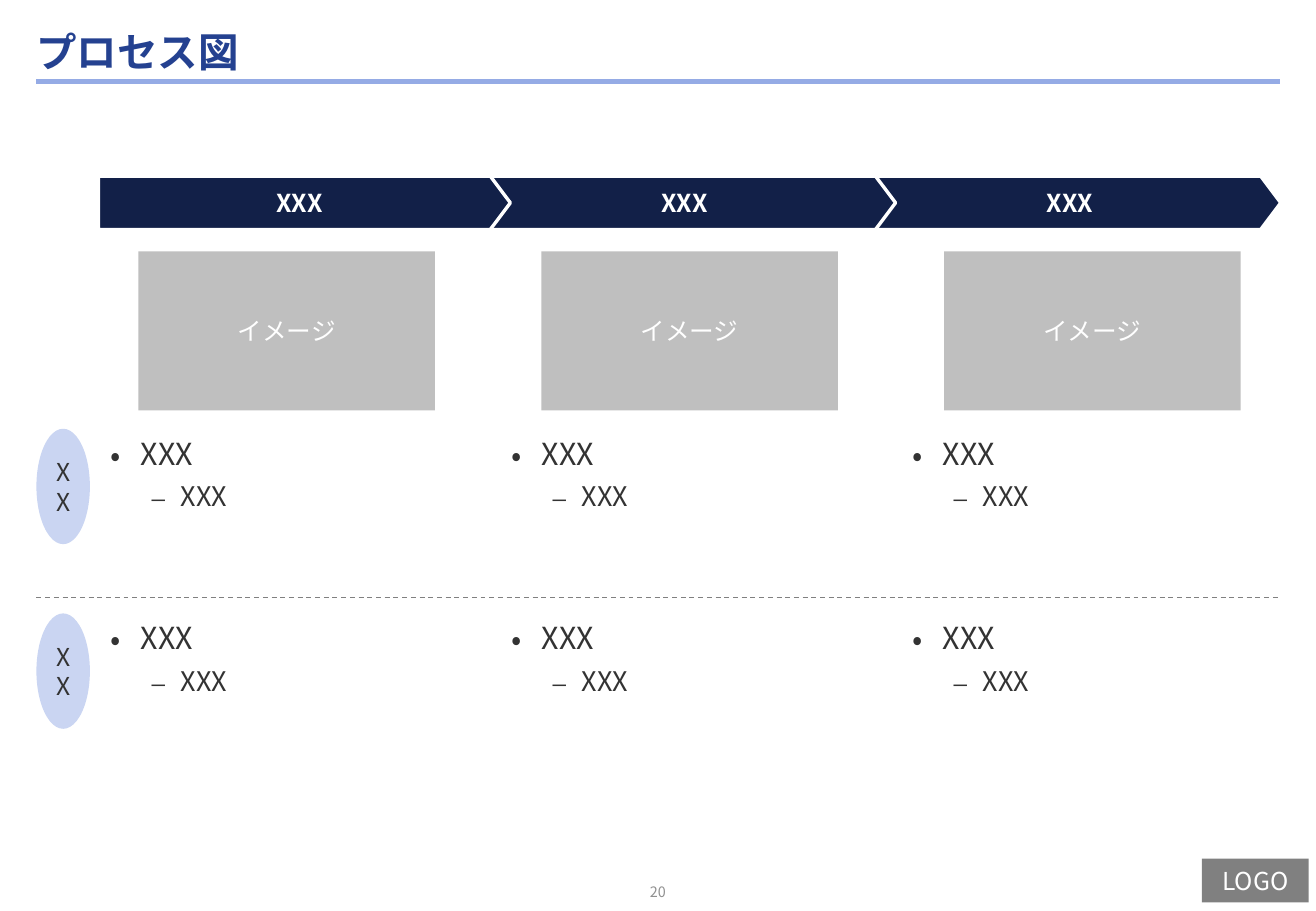
from lxml import etree
from pptx import Presentation
from pptx.dml.color import RGBColor
from pptx.enum.dml import MSO_LINE
from pptx.enum.shapes import MSO_CONNECTOR, MSO_SHAPE
from pptx.enum.text import MSO_ANCHOR, PP_ALIGN
from pptx.oxml.ns import qn
from pptx.util import Inches, Pt

RECT, OVAL, ARROW = MSO_SHAPE.RECTANGLE, MSO_SHAPE.OVAL, MSO_SHAPE.PENTAGON
LEFT, CENTER = PP_ALIGN.LEFT, PP_ALIGN.CENTER
MIDDLE, DASH = MSO_ANCHOR.MIDDLE, MSO_LINE.DASH
FONT = "Noto Sans CJK JP"
NAVY, BLUE, SKY, PALE = "122048", "244190", "95ABE5", "CAD5F2"
WHITE, DARK, GRAY, SILVER, MUTED = "FFFFFF", "333333", "808080", "BFBFBF", "909090"

TITLE = "プロセス図"
STEPS = [("XXX", "イメージ"), ("XXX", "イメージ"), ("XXX", "イメージ")]
POINTS = [("XXX", "XXX")] * len(STEPS)
ROWS = [("XX", POINTS), ("XX", POINTS)]
# bullet, text size, indent, hanging, space before
LEVELS = [("•", 18, 0.25, 0.25, 10), ("⎯", 16, 0.58, 0.24, 5)]

EDGE, END = 0.3, 10.53
BODY_X, BODY_W, BODY_GAP = 0.81, 3.13, 3.3
STEP_W, STEP_GAP = 3.39, 3.17
IMAGE_X, IMAGE_GAP = 1.14, 3.315
ROW_Y, ROW_GAP = 3.53, 1.52

deck = Presentation()
deck.slide_width, deck.slide_height = Inches(10.83), Inches(7.5)
slide = deck.slides.add_slide(deck.slide_layouts[5])
shapes = slide.shapes


def color(code):
    return RGBColor.from_string(code)


def write(para, text, size=14.6, ink=WHITE, bold=False, align=CENTER):
    para.alignment = align
    run = para.add_run()
    run.text = text
    font = run.font
    font.name, font.size, font.bold = FONT, Pt(size), bold
    font.color.rgb = color(ink)
    east = etree.SubElement(font._element, qn("a:ea"))
    east.set("typeface", FONT)


def trim(frame, right=0):
    frame.margin_left = frame.margin_top = frame.margin_bottom = 0
    frame.margin_right = Inches(right)
    frame.vertical_anchor = MIDDLE
    frame.word_wrap = True


def block(kind, box, fill, text, edge=None, **style):
    shape = shapes.add_shape(kind, *map(Inches, box))
    shape.shadow.inherit = False
    shape.fill.solid()
    shape.fill.fore_color.rgb = color(fill)
    if edge:
        shape.line.color.rgb = color(edge)
        shape.line.width = Pt(2)
    else:
        shape.line.fill.background()
    frame = shape.text_frame
    frame.word_wrap = True
    frame.vertical_anchor = MIDDLE
    write(frame.paragraphs[0], text, **style)
    return shape


def rule(y, ink, width, dash=None):
    line = shapes.add_connector(MSO_CONNECTOR.STRAIGHT, Inches(EDGE), Inches(y),
                                Inches(END), Inches(y))
    line.line.color.rgb = color(ink)
    line.line.width = Pt(width)
    if dash:
        line.line.dash_style = dash
    etree.SubElement(line._element.spPr, qn("a:effectLst"))


def bullets(x, y, texts):
    frame = shapes.add_textbox(Inches(x), Inches(y), Inches(BODY_W), Inches(1.26)).text_frame
    frame.word_wrap = True
    for i, (text, (mark, size, indent, hang, before)) in enumerate(zip(texts, LEVELS)):
        para = frame.add_paragraph() if i else frame.paragraphs[0]
        para.level = i
        para.space_before = Pt(before)
        write(para, text, size=size, ink=DARK, align=LEFT)
        props = para._p.get_or_add_pPr()
        props.set("marL", str(Inches(indent)))
        props.set("indent", str(-Inches(hang)))
        etree.SubElement(props, qn("a:buFont")).set("typeface", FONT)
        etree.SubElement(props, qn("a:buChar")).set("char", mark)


rule(0.67, SKY, 3)
block(RECT, (9.89, 7.07, 0.88, 0.36), GRAY, "LOGO")
page = shapes.add_textbox(Inches(5.1), Inches(7.24), Inches(0.63), Inches(0.21)).text_frame
trim(page)
write(page.paragraphs[0], "20", size=8.5, ink=MUTED)

title = shapes.title
title.left, title.top = Inches(EDGE), Inches(0.25)
title.width, title.height = Inches(10.24), Inches(0.39)
trim(title.text_frame, right=0.1)
head = title.text_frame.paragraphs[0]
head.line_spacing = 0.9
write(head, TITLE, size=24, ink=BLUE, bold=True, align=LEFT)

# The left arrows lie over the right ones
for i, (name, image) in reversed(list(enumerate(STEPS))):
    step = block(ARROW, (BODY_X + i * STEP_GAP, 1.45, STEP_W, 0.44), NAVY, name,
                 edge=WHITE, bold=True)
    step.adjustments[0] = 0.375
    block(RECT, (IMAGE_X + i * IMAGE_GAP, 2.07, 2.44, 1.31), SILVER, image)

rule(4.92, GRAY, 0.75, DASH)
for r, (label, cells) in enumerate(ROWS):
    y = ROW_Y + r * ROW_GAP
    block(OVAL, (EDGE, y, 0.44, 0.95), PALE, label, ink=DARK)
    for c, texts in enumerate(cells):
        bullets(BODY_X + c * BODY_GAP, y, texts)

deck.save("out.pptx")
